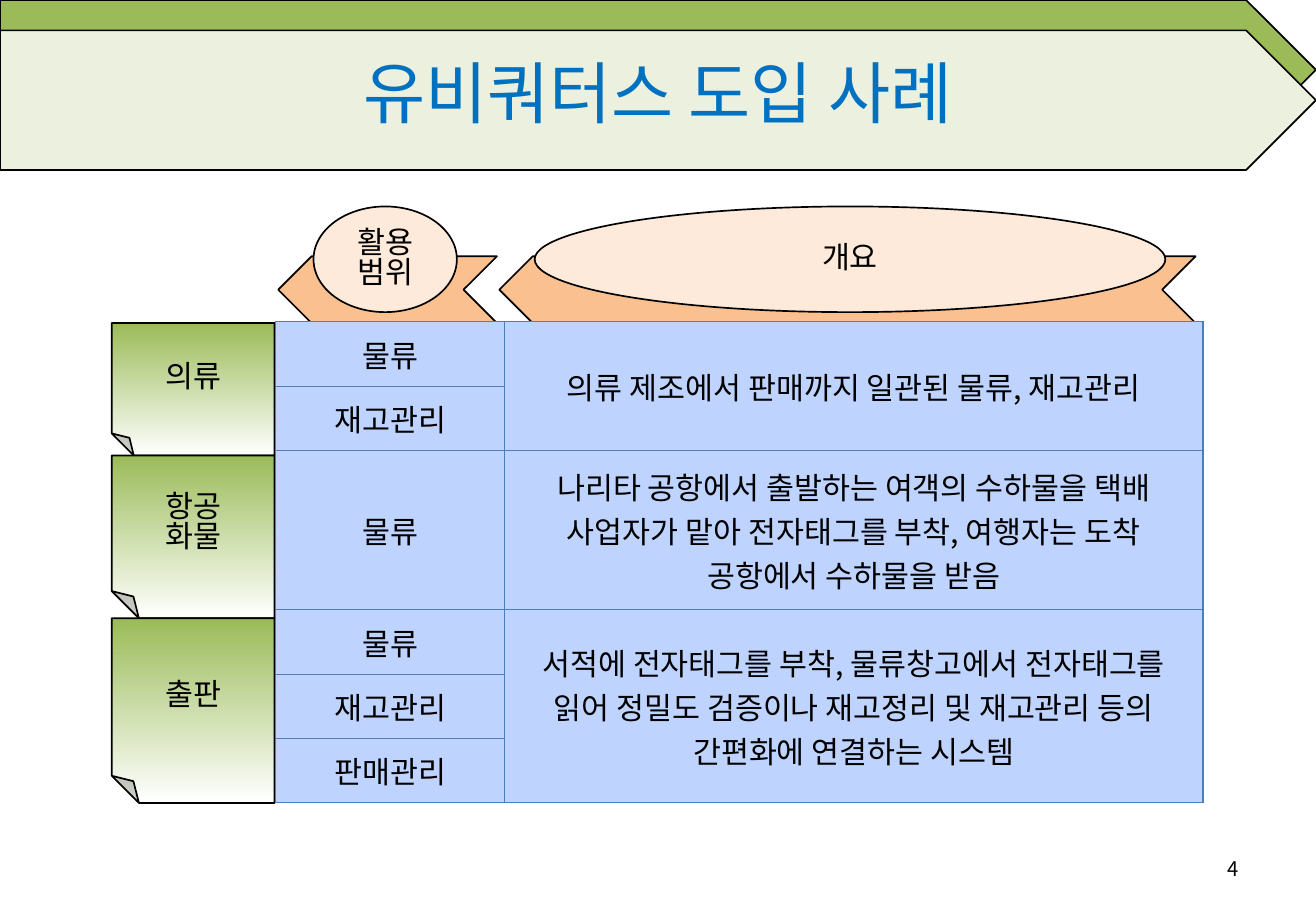
from lxml import etree
from pptx import Presentation
from pptx.dml.color import RGBColor
from pptx.enum.shapes import MSO_SHAPE
from pptx.enum.text import MSO_ANCHOR, PP_ALIGN
from pptx.oxml.ns import qn
from pptx.util import Inches, Pt

CENTER, RIGHT = PP_ALIGN.CENTER, PP_ALIGN.RIGHT
MIDDLE = MSO_ANCHOR.MIDDLE
PENTAGON, CHEVRON = MSO_SHAPE.PENTAGON, MSO_SHAPE.CHEVRON
OVAL, FOLDED_CORNER = MSO_SHAPE.OVAL, MSO_SHAPE.FOLDED_CORNER

FONT = "Noto Sans CJK KR"
BLACK, WHITE, GREEN = "000000", "FFFFFF", "9BBB59"
PALE_GREEN, ORANGE, PALE_ORANGE = "EBF1DE", "FAC090", "FDEADA"
TITLE_BLUE, CELL_BLUE, BORDER_BLUE = "0070C0", "BFD3FF", "4B7EBC"

SLIDE_WIDTH, SLIDE_HEIGHT = 10.83, 7.5
TITLE = "유비쿼터스 도입 사례"
PAGE = "4"
BANNERS = [(0, GREEN), (0.25, PALE_GREEN)]
# heading, ribbon left, ribbon width, oval width
HEADINGS = [("활용범위", 2.29, 1.8, 1.18), ("개요", 4.11, 5.73, 5.19)]
# field, tab height, uses, row height, summary
CASES = [
    ("의류", 1.09, ["물류", "재고관리"], 0.53,
     "의류 제조에서 판매까지 일관된 물류, 재고관리"),
    ("항공\n화물", 1.34, ["물류"], 1.31,
     "나리타 공항에서 출발하는 여객의 수하물을 택배 사업자가 맡아 "
     "전자태그를 부착, 여행자는 도착 공항에서 수하물을 받음"),
    ("출판", 1.52, ["물류", "재고관리", "판매관리"], 0.53,
     "서적에 전자태그를 부착, 물류창고에서 전자태그를 읽어 정밀도 "
     "검증이나 재고정리 및 재고관리 등의 간편화에 연결하는 시스템"),
]
TABLE_LEFT, TABLE_TOP = 2.27, 2.65
COLUMN_WIDTHS = [1.88, 5.75]
TAB_LEFT, TAB_TOP, TAB_WIDTH = 0.92, 2.66, 1.34


def rgb(color):
    return RGBColor.from_string(color)


def write(frame, text, size=18, color=BLACK, align=CENTER, spacing=None):
    frame.text = text
    frame.word_wrap = True
    frame.vertical_anchor = MIDDLE
    for paragraph in frame.paragraphs:
        paragraph.alignment = align
        paragraph.line_spacing = spacing
        for run in paragraph.runs:
            for name, value in {"name": FONT, "size": Pt(size)}.items():
                setattr(run.font, name, value)
            run.font.color.rgb = rgb(color)
            # East Asian glyphs take their own typeface setting
            etree.SubElement(run.font._element, qn("a:ea"), typeface=FONT)


def add_outlined(slide, kind, box, fill=None, flip=False, text=""):
    """Add a black-outlined shape; without a fill colour it fades green to white."""
    shape = slide.shapes.add_shape(kind, *map(Inches, box))
    shape.shadow.inherit = False
    if fill:
        shape.fill.solid()
        shape.fill.fore_color.rgb = rgb(fill)
    else:
        shape.fill.gradient()
        shape.fill.gradient_angle = 270
        for stop, color in zip(shape.fill.gradient_stops, (GREEN, WHITE)):
            stop.color.rgb = rgb(color)
    shape.line.color.rgb = rgb(BLACK)
    shape.line.width = Pt(1)
    if flip:
        shape._element.spPr.find(qn("a:xfrm")).set("flipH", "1")
    if text:
        write(shape.text_frame, text, spacing=0.82)


def style_cell(cell):
    props = cell._tc.get_or_add_tcPr()
    for side in ("a:lnL", "a:lnR", "a:lnT", "a:lnB"):
        border = etree.SubElement(props, qn(side), w=str(Pt(0.75)))
        fill = etree.SubElement(border, qn("a:solidFill"))
        etree.SubElement(fill, qn("a:srgbClr"), val=BORDER_BLUE)
    cell.fill.solid()
    cell.fill.fore_color.rgb = rgb(CELL_BLUE)


def add_case_table(slide):
    heights = [height for _, _, uses, height, _ in CASES for _ in uses]
    table = slide.shapes.add_table(
        len(heights), len(COLUMN_WIDTHS), Inches(TABLE_LEFT), Inches(TABLE_TOP),
        Inches(sum(COLUMN_WIDTHS)), Inches(sum(heights))).table
    table.first_row = table.horz_banding = False
    for column, width in zip(table.columns, COLUMN_WIDTHS):
        column.width = Inches(width)
    for row, height in zip(table.rows, heights):
        row.height = Inches(height)
    for cell in table.iter_cells():
        style_cell(cell)
    first = 0
    for _, _, uses, _, summary in CASES:
        last = first + len(uses) - 1
        if last > first:
            table.cell(first, 1).merge(table.cell(last, 1))
        entries = [(first + i, 0, use) for i, use in enumerate(uses)]
        for row, column, text in entries + [(first, 1, summary)]:
            cell = table.cell(row, column)
            write(cell.text_frame, text)
            cell.vertical_anchor = MIDDLE
        first = last + 1


def main():
    deck = Presentation()
    deck.slide_width, deck.slide_height = Inches(SLIDE_WIDTH), Inches(SLIDE_HEIGHT)
    slide = deck.slides.add_slide(deck.slide_layouts[5])

    for top, color in BANNERS:
        add_outlined(slide, PENTAGON, (0, top, SLIDE_WIDTH, 1.15), color)

    title = slide.shapes.title
    title_box = {"left": 0.54, "top": 0.13, "width": 9.75, "height": 1.25}
    for name, value in title_box.items():
        setattr(title, name, Inches(value))
    write(title.text_frame, TITLE, 40, TITLE_BLUE)
    slide.shapes._spTree.append(title._element)  # in front of the banners

    page = slide.shapes.add_textbox(*map(Inches, (7.76, 6.95, 2.53, 0.4)))
    write(page.text_frame, PAGE, 12, align=RIGHT)

    for heading, left, width, oval_width in HEADINGS:
        add_outlined(slide, CHEVRON, (left, 2.11, width, 0.55), ORANGE, flip=True)
        add_outlined(slide, OVAL, (left + 0.29, 1.7, oval_width, 0.87),
                     PALE_ORANGE, text=heading)

    top = TAB_TOP
    for field, height, *_ in CASES:
        add_outlined(slide, FOLDED_CORNER, (TAB_LEFT, top, TAB_WIDTH, height),
                     flip=True, text=field)
        top += height

    add_case_table(slide)
    deck.save("out.pptx")


if __name__ == "__main__":
    main()
